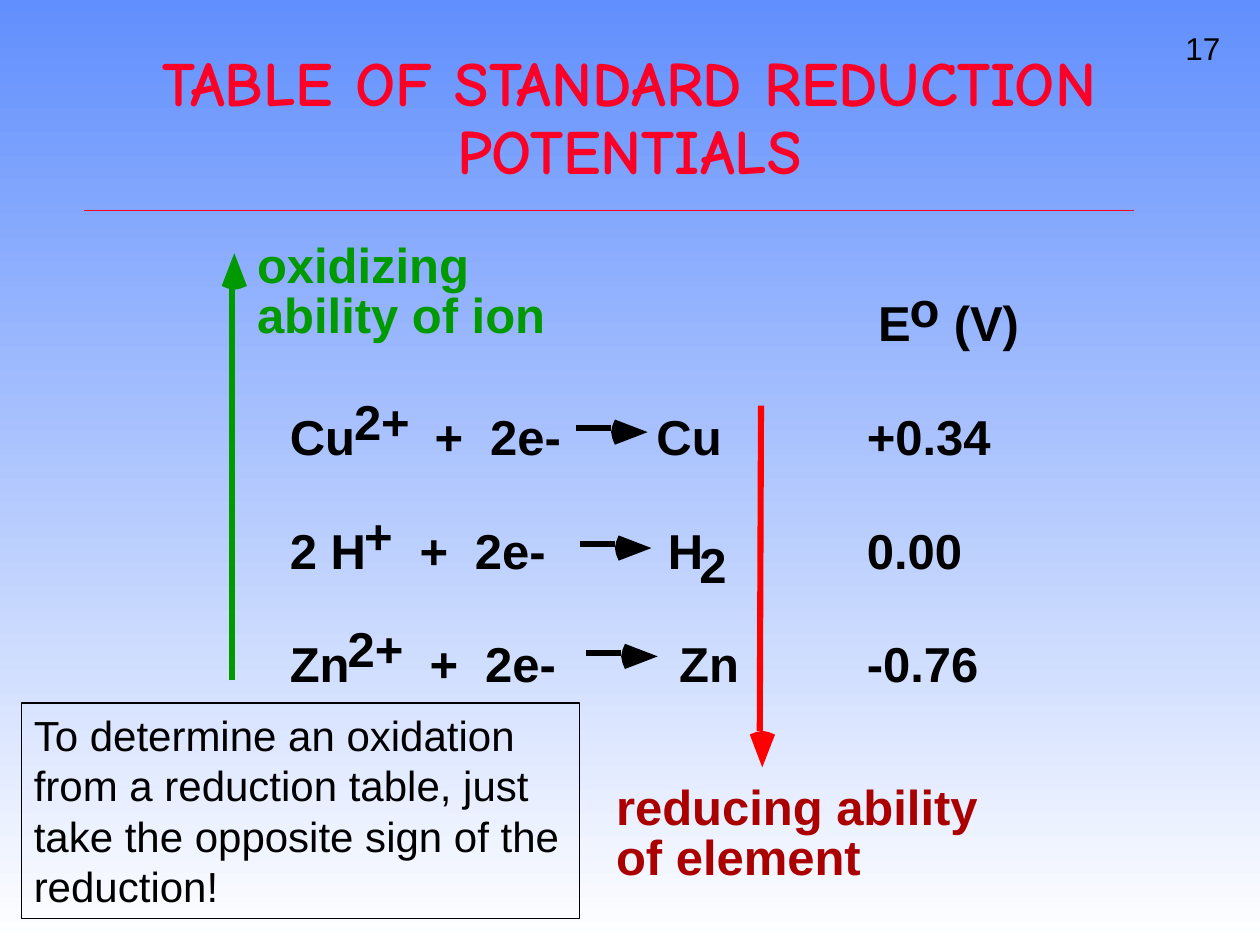
from math import hypot

from lxml.etree import SubElement
from pptx import Presentation
from pptx.dml.color import RGBColor
from pptx.enum.shapes import MSO_CONNECTOR, MSO_SHAPE
from pptx.enum.text import MSO_ANCHOR, MSO_AUTO_SIZE, PP_ALIGN
from pptx.oxml import parse_xml
from pptx.oxml.ns import nsdecls, qn
from pptx.util import Inches, Pt

BLACK = RGBColor(0x00, 0x00, 0x00)
WHITE = RGBColor(0xFF, 0xFF, 0xFF)
SKY = RGBColor(0x61, 0x8F, 0xFD)
CRIMSON = RGBColor(0xFC, 0x01, 0x28)
GREEN = RGBColor(0x00, 0x99, 0x00)
RED = RGBColor(0xFF, 0x00, 0x00)
DARK_RED = RGBColor(0xAA, 0x00, 0x00)

presentation = Presentation()
presentation.slide_width = Inches(10)
presentation.slide_height = Inches(7.5)
slide = presentation.slides.add_slide(presentation.slide_layouts[5])

# Grid of 100 columns by 75 rows
COLUMN = presentation.slide_width // 100
ROW = presentation.slide_height // 75


def add_text(text, left, top, width, height=3.8, size=28, color=BLACK,
             bold=True, inset=(0, 0), outline=None, wrap=False):
    shape = slide.shapes.add_shape(
        MSO_SHAPE.RECTANGLE, int(left * COLUMN), int(top * ROW),
        int(width * COLUMN), int(height * ROW))
    shape.shadow.inherit = False
    shape.fill.background()
    if outline is None:
        shape.line.fill.background()
    else:
        shape.line.color.rgb = outline
        shape.line.width = Pt(1)
    frame = shape.text_frame
    frame.word_wrap = wrap
    frame.vertical_anchor = MSO_ANCHOR.TOP
    frame.margin_left = frame.margin_right = int(inset[0] * COLUMN)
    frame.margin_top = frame.margin_bottom = int(inset[1] * ROW)
    paragraph = frame.paragraphs[0]
    paragraph.alignment = PP_ALIGN.LEFT
    run = paragraph.add_run()
    run.text = text
    run.font.name = "Arial"
    run.font.size = Pt(size)
    run.font.bold = bold
    run.font.color.rgb = color


def add_line(start, end, color, width, tip=None):
    """Draw a line and, if a tip is given, a head with a bowed back."""
    line = slide.shapes.add_connector(
        MSO_CONNECTOR.STRAIGHT, int(start[0] * COLUMN), int(start[1] * ROW),
        int(end[0] * COLUMN), int(end[1] * ROW))
    line.line.color.rgb = color
    line.line.width = Pt(width)
    SubElement(line._element.spPr, qn("a:effectLst"))
    if tip is None:
        return
    length = hypot(end[0] - start[0], end[1] - start[1])
    along_x = (end[0] - start[0]) / length
    along_y = (end[1] - start[1]) / length
    # Distance behind the tip, distance to the side
    outline = [(0, 0), (2.6, 1), (2.8, 0.5), (2.9, 0), (2.8, -0.5), (2.6, -1)]
    points = [(int((tip[0] - back * along_x - side * along_y) * COLUMN),
               int((tip[1] - back * along_y + side * along_x) * ROW))
              for back, side in outline]
    builder = slide.shapes.build_freeform(*points[0])
    builder.add_line_segments(points[1:], close=True)
    head = builder.convert_to_shape()
    head.shadow.inherit = False
    head.fill.solid()
    head.fill.fore_color.rgb = color
    head.line.fill.background()


# Background
background = slide.background.fill
background.gradient()
background.gradient_angle = 270
for stop, color in zip(background.gradient_stops, (SKY, WHITE)):
    stop.color.rgb = color

# Title with its rule and the slide number
title = slide.shapes.title
title.left, title.top = int(10.8 * COLUMN), int(3.3 * ROW)
title.width, title.height = int(78.3 * COLUMN), int(12.5 * ROW)
title.text_frame.auto_size = MSO_AUTO_SIZE.NONE
title.text_frame.word_wrap = True
title.text_frame.vertical_anchor = MSO_ANCHOR.MIDDLE
paragraph = title.text_frame.paragraphs[0]
paragraph.alignment = PP_ALIGN.CENTER
paragraph.line_spacing = 0.9
run = paragraph.add_run()
run.text = "TABLE OF STANDARD REDUCTION POTENTIALS"
run.font.name = "Comic Neue"
run.font.size = Pt(36)
run.font.bold = True
run.font.color.rgb = CRIMSON
run._r.rPr.find(qn("a:solidFill")).addnext(parse_xml(
    f'<a:effectLst {nsdecls("a")}><a:outerShdw dist="35921" dir="2700000">'
    '<a:srgbClr val="000000"/></a:outerShdw></a:effectLst>'))
add_line((6.7, 16.7), (90, 16.7), CRIMSON, 1)
add_text("17", 93.1, 1.8, 5, 4, size=18, bold=False, inset=(1, 0.5))

# Column heading
add_text("E", 69.7, 23.2, 2.6)
add_text("o", 72.2, 22.1, 2.4)
add_text("(V)", 75.7, 23.2, 6)

# Half-reactions: ion, charge and its column, plus column,
# product and its column, potential, arrow tip
reactions = [
    ("Cu", "2+", 28.1, 34.5, "Cu", 52.1, "+0.34", (51.4, 34.3)),
    ("2 H", "+", 28.9, 33.3, "H", 53, "0.00", (51.7, 43.5)),
    ("Zn", "2+", 27.6, 34.1, "Zn", 53.9, "-0.76", (52.2, 52.1)),
]
for index, (ion, charge, charge_left, plus_left, product, product_left,
            potential, tip) in enumerate(reactions):
    top = 32.3 + 9 * index
    add_text(ion, 23, top, 6)
    add_text(charge, charge_left, top - 1.2, 4.5)
    add_text("+", plus_left, top, 2.3)
    add_text("2e-", plus_left + 4.4, top, 5.7)
    add_text(product, product_left, top, 5.2)
    add_text(potential, 68.8, top, 10)
    add_line((tip[0] - 5.7, tip[1] - 0.3), (tip[0] - 2.9, tip[1] - 0.3),
             BLACK, 3.5, tip=tip)
add_text("2", 55.5, 42.4, 2.2)

# Trends
add_line((18.4, 54), (18.4, 22.6), GREEN, 3.5, tip=(18.6, 20.1))
add_line((60.4, 32.2), (60.3, 58), RED, 3.5, tip=(60.5, 60.9))
trends = [
    (("oxidizing", "ability of ion"), 20.4, 18.6, GREEN),
    (("reducing ability", "of element"), 48.9, 61.6, DARK_RED),
]
for lines, left, top, color in trends:
    for index, text in enumerate(lines):
        add_text(text, left, top + 4 * index, 30, color=color)

# Note
add_text("To determine an oxidation from a reduction table, just take "
         "the opposite sign of the reduction!", 1.7, 55.8, 44.3, 17.1,
         size=24, bold=False, inset=(1, 0.5), outline=BLACK, wrap=True)

presentation.save("out.pptx")
